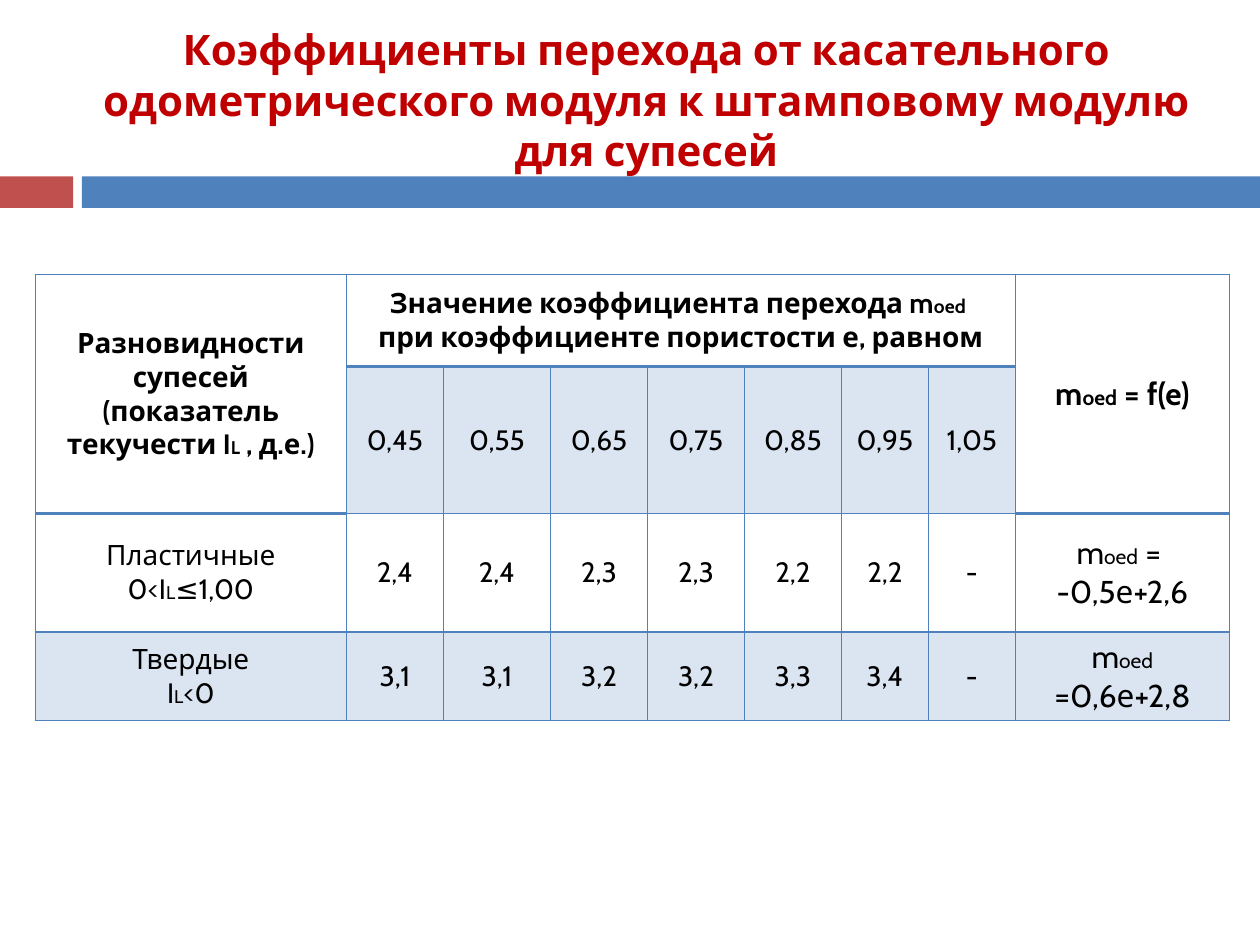
from lxml.etree import SubElement
from pptx import Presentation
from pptx.dml.color import RGBColor
from pptx.enum.shapes import MSO_SHAPE as SHAPE
from pptx.enum.text import MSO_ANCHOR as ANCHOR, PP_ALIGN as ALIGN
from pptx.oxml.ns import qn
from pptx.util import Inches, Pt

FONT = "Cabin"
COLORS = {"red": "C0504D", "blue": "4F81BD", "title": "C00000", "text": "000000"}


def write_text(text_frame, text, size, small_size, bold, color):
    """Centre the text; parts between underscores are set in the small size."""
    text_frame.word_wrap = True
    for index, line in enumerate(text.split("\n")):
        paragraph = text_frame.paragraphs[0] if index == 0 else text_frame.add_paragraph()
        paragraph.alignment = ALIGN.CENTER
        for part_index, part in enumerate(line.split("_")):
            if not part:
                continue
            run = paragraph.add_run()
            run.text = part
            run.font.name = FONT
            run.font.size = Pt(small_size if part_index % 2 else size)
            run.font.bold = bold
            run.font.color.rgb = RGBColor.from_string(COLORS[color])


def set_border(cell, side, width):
    line = SubElement(cell._tc.get_or_add_tcPr(), qn(f"a:ln{side}"), w=str(Pt(width)))
    fill = SubElement(line, qn("a:solidFill"))
    SubElement(fill, qn("a:srgbClr"), val=COLORS["blue"])


presentation = Presentation()
presentation.slide_width, presentation.slide_height = Inches(10), Inches(7.5)
slide = presentation.slides.add_slide(presentation.slide_layouts[6])

# Two-colour band under the title
for left, width, color in [(0, 0.58, "red"), (0.65, 9.35, "blue")]:
    band = slide.shapes.add_shape(
        SHAPE.RECTANGLE, Inches(left), Inches(1.4), Inches(width), Inches(0.25))
    band.shadow.inherit = False
    band.fill.solid()
    band.fill.fore_color.rgb = RGBColor.from_string(COLORS[color])
    band.line.fill.background()

# Title
title = slide.shapes.add_textbox(Inches(0.67), Inches(0.25), Inches(8.92), Inches(1.08))
title.text_frame.vertical_anchor = ANCHOR.MIDDLE
write_text(title.text_frame,
           "Коэффициенты перехода от касательного одометрического модуля "
           "к штамповому модулю для супесей", 24, 24, True, "title")

# Table grid
column_widths = [2.47, 0.77, 0.85, 0.77, 0.77, 0.77, 0.69, 0.69, 1.7]
row_heights = [0.73, 0.94, 0.94, 0.54]
last_column = len(column_widths) - 1
table_shape = slide.shapes.add_table(
    len(row_heights), len(column_widths),
    Inches(0.28), Inches(2.18), Inches(9.49), Inches(3.23))
table = table_shape.table
table.first_row = table.horz_banding = False
for column, width in zip(table.columns, column_widths):
    column.width = Inches(width)
for row, height in zip(table.rows, row_heights):
    row.height = Inches(height)
table_shape.height = Inches(3.23)

table.cell(0, 0).merge(table.cell(1, 0))
table.cell(0, 1).merge(table.cell(0, last_column - 1))
table.cell(0, last_column).merge(table.cell(1, last_column))

# Table contents; None stands for a merged-away cell
rows = [
    ["Разновидности супесей (показатель текучести I_L_ , д.е.)",
     "Значение коэффициента перехода m_oed_  при коэффициенте пористости е, равном",
     *[None] * 6, "m_oed_ = f(e)"],
    [None, "0,45", "0,55", "0,65", "0,75", "0,85", "0,95", "1,05", None],
    ["Пластичные\n0<I_L_≤1,00", "2,4", "2,4", "2,3", "2,3", "2,2", "2,2", "-",
     "m_oed_ = \n-0,5е+2,6"],
    ["Твердые\nI_L_<0", "3,1", "3,1", "3,2", "3,2", "3,3", "3,4", "-",
     "m_oed_ =0,6е+2,8"],
]
for row_index, row in enumerate(rows):
    for column_index, text in enumerate(row):
        cell = table.cell(row_index, column_index)
        is_edge = column_index in (0, last_column)

        # The line under each header cell is heavier
        heavy_bottom = row_index == 0 or (row_index == 1 and is_edge)
        heavy_top = row_index == (2 if is_edge else 1)
        for side, heavy in [("L", False), ("R", False), ("T", heavy_top), ("B", heavy_bottom)]:
            set_border(cell, side, 2 if heavy else 1)

        # Tinted rows
        if row_index == 3 or (row_index == 1 and not is_edge):
            cell.fill.solid()
            cell.fill.fore_color.rgb = RGBColor.from_string(COLORS["blue"])
            tint = cell._tc.tcPr.find(qn("a:solidFill"))[0]
            SubElement(tint, qn("a:alpha"), val="20000")
        else:
            cell.fill.background()

        if text:
            cell.vertical_anchor = ANCHOR.MIDDLE
            size, small_size = {0: (16, 10.5), last_column: (18, 12)}.get(column_index, (16, 11))
            write_text(cell.text_frame, text, size, small_size, row_index == 0, "text")

presentation.save("out.pptx")
